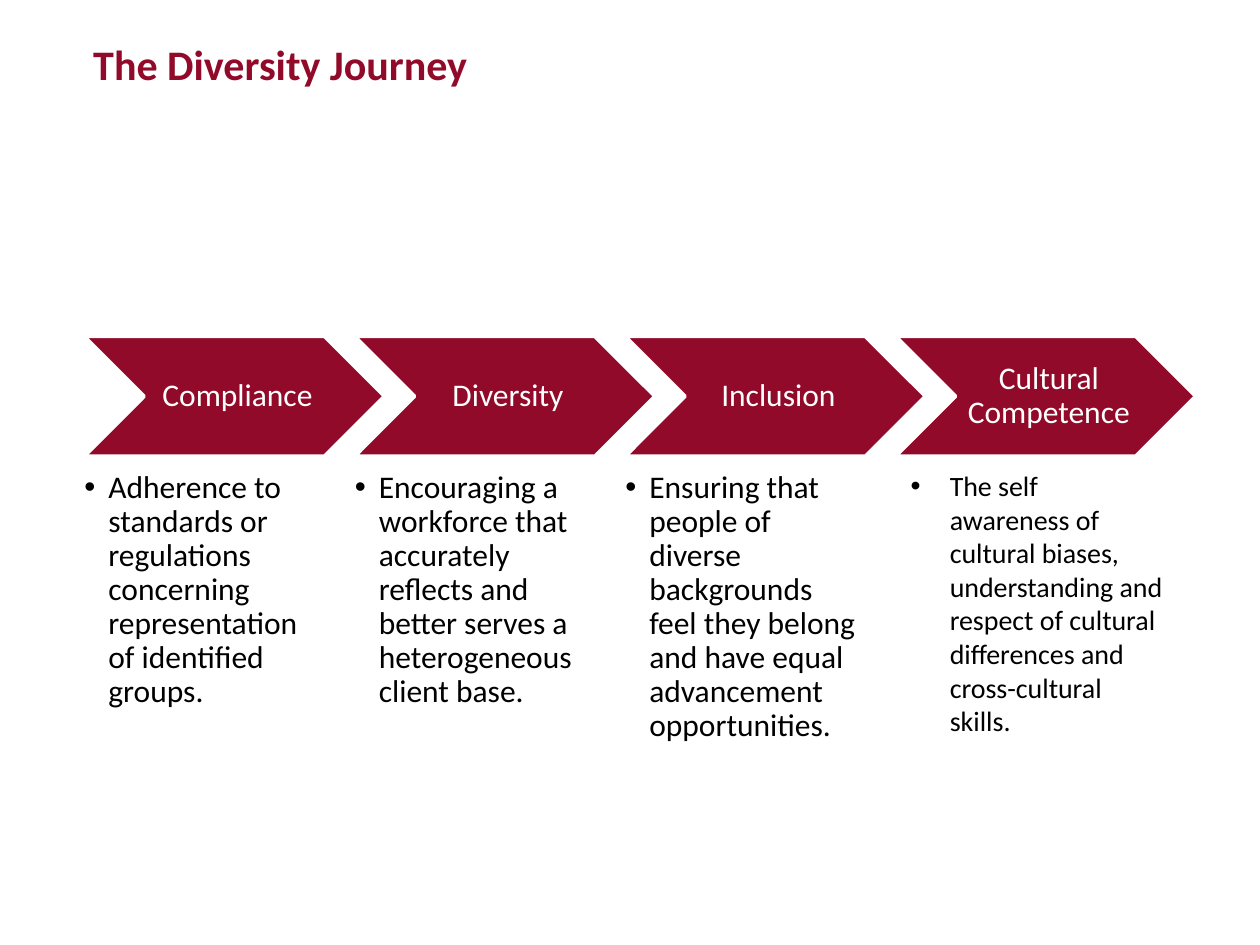
"""Build the Diversity Journey slide: a title above four chevron stages."""
from collections import namedtuple

from pptx import Presentation
from pptx.dml.color import RGBColor
from pptx.enum.shapes import MSO_SHAPE as Shape
from pptx.enum.text import MSO_ANCHOR as Anchor, MSO_AUTO_SIZE as AutoSize, PP_ALIGN as Align
from pptx.oxml.xmlchemy import OxmlElement
from pptx.util import Inches, Pt

Box = namedtuple("Box", "left top width height")

CRIMSON = RGBColor(0x91, 0x0A, 0x29)
WHITE = RGBColor(0xFF, 0xFF, 0xFF)
BLACK = RGBColor(0x00, 0x00, 0x00)
WIDTH, HEIGHT = Inches(10), Inches(7.5)

TITLE_BOX = Box(0.74, 0, 6.7, 1.03)
JOURNEY_BOX = Box(0.67, 2.67, 8.82, 3.32)
CHEVRON_SIZE = (2.38, 0.95)
BODY_FRAME = Box(0, 1.07, 1.91, 2.25)
LAST_BODY_FRAME = Box(0.02, 1, 2.2, 2.26)

BODY_STYLE = {"size": 18, "spacing": 0.9, "indent": 0.19, "margins": (0, 0, 0, 0)}
LAST_BODY_STYLE = {"size": 16, "spacing": 1.0, "indent": 0.31,
                   "margins": (0.1, 0.05, 0.1, 0.05), "bullet_size": 102}

STAGES = [
    ("Compliance", "Adherence to standards or regulations concerning "
     "representation of identified groups.", BODY_FRAME, BODY_STYLE),
    ("Diversity", "Encouraging a workforce that accurately reflects and better "
     "serves a heterogeneous client base.", BODY_FRAME, BODY_STYLE),
    ("Inclusion", "Ensuring that people of diverse backgrounds feel they belong "
     "and have equal advancement opportunities.", BODY_FRAME, BODY_STYLE),
    ("Cultural Competence", "The self awareness of cultural biases, understanding and "
     "respect of cultural differences and cross-cultural skills.",
     LAST_BODY_FRAME, LAST_BODY_STYLE),
]


def set_attributes(target, values):
    """Set every attribute named in a dict of format values."""
    for name, value in values.items():
        setattr(target, name, value)


def to_lengths(box):
    """Turn a box in inches into slide lengths."""
    return [Inches(value) for value in box]


def write_text(shape, text, size, color, margins, spacing, bold=False,
               anchor=Anchor.TOP, align=Align.LEFT, fit=AutoSize.NONE,
               indent=0, bullet_size=None):
    """Fill a shape with one formatted paragraph, bulleted when indented."""
    left, top, right, bottom = to_lengths(margins)
    set_attributes(shape.text_frame, {
        "word_wrap": True, "auto_size": fit, "vertical_anchor": anchor,
        "margin_left": left, "margin_top": top,
        "margin_right": right, "margin_bottom": bottom})
    paragraph = shape.text_frame.paragraphs[0]
    paragraph.text = text
    if indent:
        add_bullet(paragraph, indent, bullet_size)
    set_attributes(paragraph, {"alignment": align, "line_spacing": spacing})
    font = paragraph.runs[0].font
    set_attributes(font, {"name": "Calibri", "size": Pt(size), "bold": bold})
    font.color.rgb = color


def add_bullet(paragraph, indent, bullet_size):
    """Give a paragraph a hanging bullet."""
    properties = paragraph._p.get_or_add_pPr()
    properties.set("marL", str(Inches(indent)))
    properties.set("indent", str(-Inches(indent)))
    marks = [("a:buFont", "typeface", "Arial"), ("a:buChar", "char", "•")]
    if bullet_size:
        marks.insert(0, ("a:buSzPct", "val", str(bullet_size * 1000)))
    for tag, name, value in marks:
        mark = OxmlElement(tag)
        mark.set(name, value)
        properties.append(mark)


def add_title(slide, box):
    """Place the slide title."""
    shape = slide.shapes.add_textbox(*to_lengths(box))
    write_text(shape, "The Diversity Journey", 24, CRIMSON, (0, 0.05, 0.1, 0),
               Pt(24), bold=True, anchor=Anchor.MIDDLE)


def add_stage(slide, left, top, heading, description, frame, style):
    """Place one chevron with its description below."""
    chevron = slide.shapes.add_shape(Shape.CHEVRON, *to_lengths((left, top, *CHEVRON_SIZE)))
    chevron.shadow.inherit = False
    chevron.fill.solid()
    chevron.fill.fore_color.rgb = CRIMSON
    chevron.line.color.rgb = WHITE
    chevron.line.width = Pt(2)
    write_text(chevron, heading, 18, WHITE, (0.08, 0.03, 0.03, 0.03), 0.9,
               anchor=Anchor.MIDDLE, align=Align.CENTER)
    body_box = frame._replace(left=left + frame.left, top=top + frame.top)
    body = slide.shapes.add_textbox(*to_lengths(body_box))
    write_text(body, description, color=BLACK, **style)


def add_journey(slide, box):
    """Spread the stages evenly across the box."""
    pitch = (box.width - CHEVRON_SIZE[0]) / (len(STAGES) - 1)
    for column, stage in enumerate(STAGES):
        add_stage(slide, box.left + column * pitch, box.top, *stage)


def main():
    """Build and save the presentation."""
    presentation = Presentation()
    set_attributes(presentation, {"slide_width": WIDTH, "slide_height": HEIGHT})
    slide = presentation.slides.add_slide(presentation.slide_layouts[6])
    add_title(slide, TITLE_BOX)
    add_journey(slide, JOURNEY_BOX)
    presentation.save("out.pptx")


if __name__ == "__main__":
    main()
